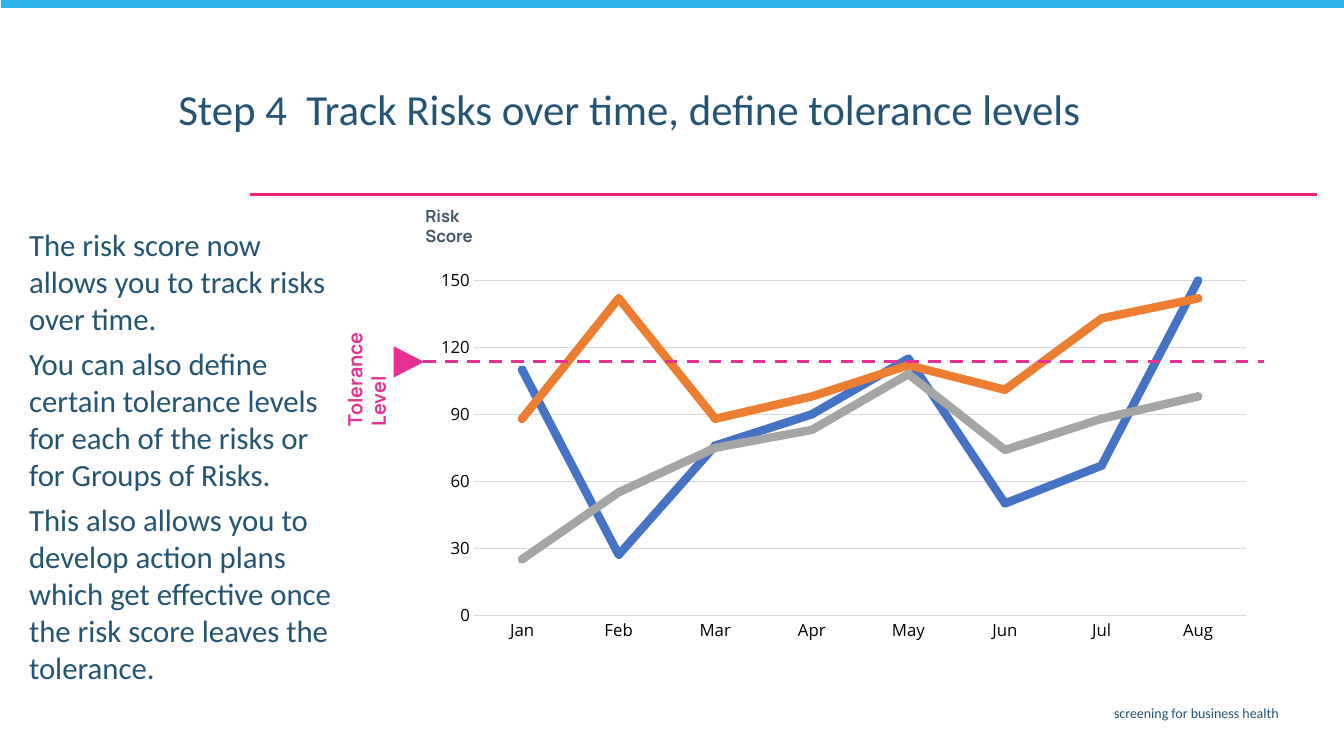
import pptx
import pptx.chart.data
import pptx.dml.color
import pptx.enum.chart
import pptx.enum.dml
import pptx.enum.shapes
import pptx.enum.text
import pptx.oxml
import pptx.oxml.ns
import pptx.util
from pptx.util import Inches

NAVY, PINK, MAGENTA, SKY = "245473", "E53292", "EC2179", "29B3E8"
SLATE, BLACK, GRID = "44546A", "000000", "D9D9D9"
ALIGN = pptx.enum.text.PP_ALIGN
ANCHOR = pptx.enum.text.MSO_ANCHOR
SHAPE = pptx.enum.shapes.MSO_SHAPE

MONTHS = ["Jan", "Feb", "Mar", "Apr", "May", "Jun", "Jul", "Aug"]
RISKS = [
    ("Series 1", "4472C4", [110, 27, 76, 90, 115, 50, 67, 150]),
    ("Series 2", "ED7D31", [88, 142, 88, 98, 112, 101, 133, 142]),
    ("Series 3", "A5A5A5", [25, 55, 75, 83, 108, 74, 88, 98]),
]
EXPLANATION = [
    "The risk score now allows you to track risks over time.",
    "You can also define certain tolerance levels for each of the risks "
    "or for Groups of Risks.",
    "This also allows you to develop action plans which get effective once "
    "the risk score leaves the tolerance.",
]


def rgb(hex_color):
    return pptx.dml.color.RGBColor.from_string(hex_color)


def add_text(slide, box, paragraphs, size, color=NAVY, font="Calibri", bold=False,
             align=ALIGN.LEFT, anchor=ANCHOR.TOP, gap=0, line_spacing=None, rotation=0):
    """Add a wrapped text box; gap is the space in points between paragraphs."""
    text_box = slide.shapes.add_textbox(*map(Inches, box))
    text_box.rotation = rotation
    frame = text_box.text_frame
    frame.word_wrap = True
    frame.vertical_anchor = anchor
    for index, text in enumerate(paragraphs):
        paragraph = frame.add_paragraph() if index else frame.paragraphs[0]
        paragraph.alignment = align
        if index:
            paragraph.space_before = pptx.util.Pt(gap)
        if line_spacing:
            paragraph.line_spacing = line_spacing
        run = paragraph.add_run()
        run.text = text
        run.font.name = font
        run.font.size = pptx.util.Pt(size)
        run.font.bold = bold
        run.font.color.rgb = rgb(color)


def add_filled_shape(slide, kind, box, color, rotation=0):
    shape = slide.shapes.add_shape(kind, *map(Inches, box))
    shape.shadow.inherit = False
    shape.fill.solid()
    shape.fill.fore_color.rgb = rgb(color)
    shape.line.fill.background()
    shape.rotation = rotation


def add_horizontal_line(slide, left, right, y, color, width, dash=None):
    line = slide.shapes.add_connector(
        pptx.enum.shapes.MSO_CONNECTOR.STRAIGHT,
        Inches(left), Inches(y), Inches(right), Inches(y))
    line.line.color.rgb = rgb(color)
    line.line.width = pptx.util.Pt(width)
    if dash:
        line.line.dash_style = dash
    properties = line._element.spPr
    properties.append(pptx.oxml.parse_xml(
        f'<a:effectLst {pptx.oxml.ns.nsdecls("a")}/>'))


def set_plot_area(chart, x, y, w, h):
    """Fix the inner plot area, given as fractions of the chart."""
    values = "".join(f'<c:{tag} val="{value}"/>'
                     for tag, value in zip("xywh", (x, y, w, h)))
    layout = pptx.oxml.parse_xml(
        f'<c:layout {pptx.oxml.ns.nsdecls("c")}><c:manualLayout>'
        '<c:layoutTarget val="inner"/><c:xMode val="edge"/><c:yMode val="edge"/>'
        f'{values}</c:manualLayout></c:layout>')
    plot_area = chart._chartSpace.chart.plotArea
    for old in plot_area.findall(pptx.oxml.ns.qn("c:layout")):
        plot_area.remove(old)
    plot_area.insert(0, layout)


def style_text(font):
    font.name = "Open Sans"
    font.size = pptx.util.Pt(12)
    font.bold = False
    font.color.rgb = rgb(BLACK)


def style_grid_line(line):
    line.color.rgb = rgb(GRID)
    line.width = pptx.util.Pt(0.75)


def style_axes(chart):
    months, scores = chart.category_axis, chart.value_axis
    for axis in (months, scores):
        axis.major_tick_mark = pptx.enum.chart.XL_TICK_MARK.NONE
        axis.minor_tick_mark = pptx.enum.chart.XL_TICK_MARK.NONE
        style_text(axis.tick_labels.font)
    style_grid_line(months.format.line)
    scores.format.line.fill.background()
    scores.minimum_scale, scores.maximum_scale, scores.major_unit = 0, 150, 30
    scores.has_major_gridlines = True
    style_grid_line(scores.major_gridlines.format.line)


def style_risk(series, color):
    series.smooth = False
    series.format.line.color.rgb = rgb(color)
    series.format.line.width = pptx.util.Pt(6)
    series.format.line._get_or_add_ln().set("cap", "rnd")
    marker = series.marker
    marker.style = pptx.enum.chart.XL_MARKER_STYLE.CIRCLE
    marker.size = 5
    marker.format.fill.solid()
    marker.format.fill.fore_color.rgb = rgb(color)
    marker.format.line.color.rgb = rgb(color)


def add_risk_chart(slide, box):
    data = pptx.chart.data.CategoryChartData()
    data.categories = MONTHS
    for name, _, scores in RISKS:
        data.add_series(name, scores)
    chart = slide.shapes.add_chart(
        pptx.enum.chart.XL_CHART_TYPE.LINE_MARKERS, *map(Inches, box), data).chart
    chart.has_title = False
    chart.has_legend = False
    style_text(chart.font)
    style_axes(chart)
    chart.plots[0].vary_by_categories = False
    for series, (_, color, _) in zip(chart.plots[0].series, RISKS):
        style_risk(series, color)
    set_plot_area(chart, 0.06, 0.05, 0.92, 0.86)


def main():
    presentation = pptx.Presentation()
    presentation.slide_width = Inches(13.33)
    presentation.slide_height = Inches(7.5)
    slide = presentation.slides.add_slide(presentation.slide_layouts[6])

    add_horizontal_line(slide, 2.48, 13.06, 1.93, MAGENTA, 1.5)
    add_filled_shape(slide, SHAPE.RECTANGLE, (0.01, -0.02, 13.34, 0.1), SKY)
    add_text(slide, (3.65, 6.94, 9.13, 0.29), ["screening for business health"], 10,
             align=ALIGN.RIGHT)
    add_text(slide, (1.67, 0.87, 9.68, 0.76),
             ["Step 4  Track Risks over time, define tolerance levels"], 30.6,
             line_spacing=0.8)
    add_text(slide, (0.19, 2.19, 3.3, 4.7), EXPLANATION, 22, gap=6)

    add_risk_chart(slide, (4.2, 2.59, 8.33, 3.86))
    add_text(slide, (4.12, 1.99, 0.91, 0.5), ["Risk Score"], 12, SLATE, "Manrope",
             bold=True, anchor=ANCHOR.BOTTOM)
    add_filled_shape(slide, SHAPE.ISOSCELES_TRIANGLE, (3.9, 3.44, 0.31, 0.3), PINK,
                     rotation=90)
    add_horizontal_line(slide, 4.2, 12.54, 3.59, PINK, 2.25,
                        pptx.enum.dml.MSO_LINE.DASH)
    add_text(slide, (2.92, 3.33, 1.44, 0.55), ["Tolerance Level"], 14, PINK, "Manrope",
             bold=True, anchor=ANCHOR.BOTTOM, rotation=270)

    presentation.save("out.pptx")


if __name__ == "__main__":
    main()
